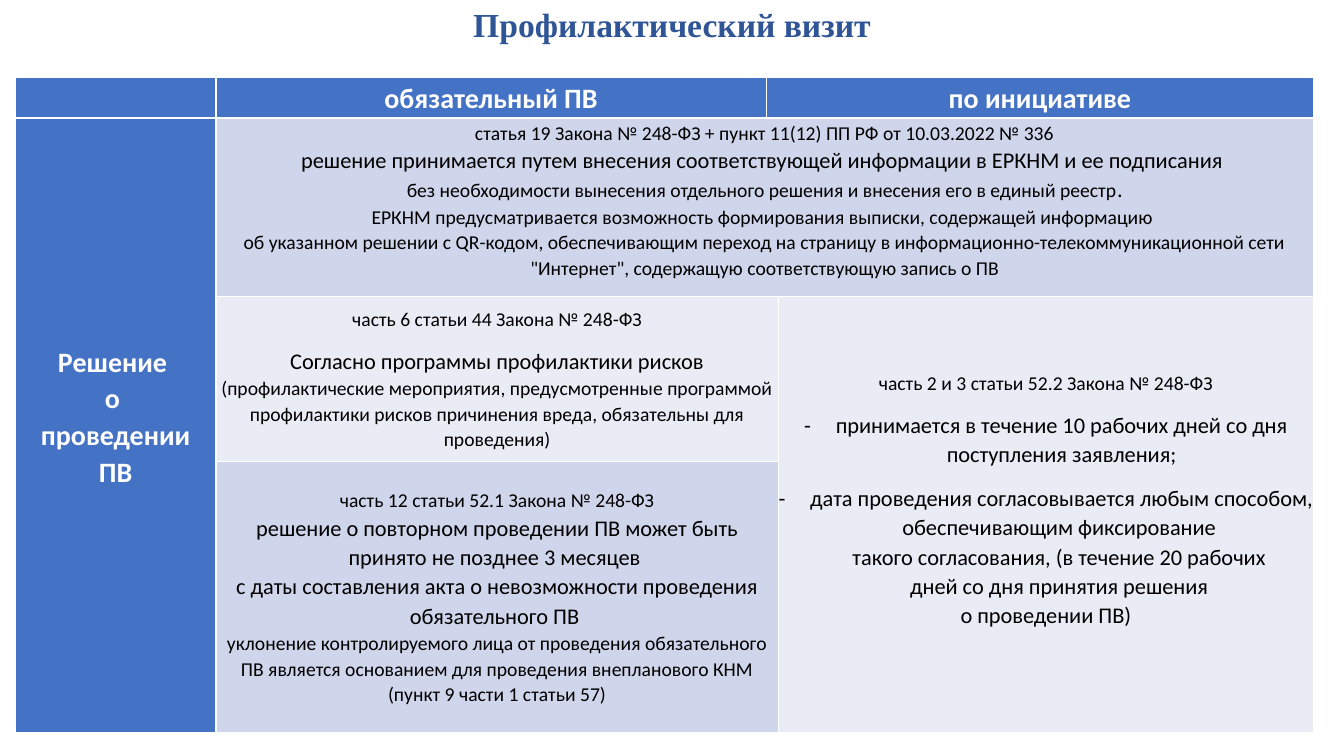
from lxml.etree import SubElement
from pptx import Presentation
from pptx.dml.color import RGBColor
from pptx.enum.text import MSO_ANCHOR as Anchor, PP_ALIGN as Align
from pptx.oxml.ns import qn
from pptx.util import Pt

WHITE = RGBColor(0xFF, 0xFF, 0xFF)
BLACK = RGBColor(0, 0, 0)
NAVY = RGBColor(0x2F, 0x55, 0x97)
BLUE = RGBColor(0x44, 0x72, 0xC4)
BAND = RGBColor(0xCF, 0xD5, 0xEA)
PALE = RGBColor(0xE9, 0xEB, 0xF5)

COLS = [143.28, 393.12, 8.64, 382.32]
ROWS = [28.8, 127.44, 118.08, 193.68]
GAP = 10.5
INDENT = 22.5


class Deck:
    """Hold the text style and the current slide."""

    font = "Calibri"
    spacing = 1.07

    def __init__(self, prs):
        self.s = prs.slides.add_slide(prs.slide_layouts[6])

    def run(self, p, text, size, color, bold=False, font=None):
        for i, line in enumerate(text.split("\n")):
            if i:
                p.add_line_break()
            r = p.add_run()
            r.text = line
            r.font.name = font or self.font
            r.font.size = Pt(size)
            r.font.bold = bold
            r.font.color.rgb = color

    def title(self, text, x, y, w, h):
        tf = self.s.shapes.add_textbox(Pt(x), Pt(y), Pt(w), Pt(h)).text_frame
        tf.word_wrap = True
        tf.vertical_anchor = Anchor.MIDDLE
        tf.margin_top = tf.margin_bottom = 0
        p = tf.paragraphs[0]
        p.alignment = Align.CENTER
        p.line_spacing = 0.9
        self.run(p, text, 24, NAVY, True, "Times New Roman")

    def table(self, x, y, cols, rows):
        tbl = self.s.shapes.add_table(
            len(rows), len(cols), Pt(x), Pt(y), Pt(sum(cols)), Pt(sum(rows))).table
        for col, width in zip(tbl.columns, cols):
            col.width = Pt(width)
        for row, height in zip(tbl.rows, rows):
            row.height = Pt(height)
        return tbl

    def bullet(self, p):
        pPr = p._p.get_or_add_pPr()
        pPr.set("marL", str(Pt(INDENT)))
        pPr.set("indent", str(-Pt(INDENT)))
        SubElement(pPr, qn("a:buFont")).set("typeface", self.font)
        SubElement(pPr, qn("a:buChar")).set("char", "-")

    def cell(self, tbl, start, end, fill, paras=(), color=BLACK, bold=False, bottom=0):
        c = tbl.cell(*start)
        if start != end:
            c.merge(tbl.cell(*end))
        c.fill.solid()
        c.fill.fore_color.rgb = fill
        c.vertical_anchor = Anchor.MIDDLE
        c.margin_left = c.margin_right = c.margin_top = 0
        c.margin_bottom = Pt(bottom)
        tf = c.text_frame
        for i, (runs, before, dash) in enumerate(paras):
            p = tf.add_paragraph() if i else tf.paragraphs[0]
            p.alignment = Align.CENTER
            p.line_spacing = self.spacing
            p.space_before = Pt(before)
            if dash:
                self.bullet(p)
            for text, size in runs:
                self.run(p, text, size, color, bold)


def para(text, size, before=0, dash=False):
    """Describe a paragraph of one run."""
    return [(text, size)], before, dash


def main():
    """Build the slide and save it."""
    prs = Presentation()
    prs.slide_width, prs.slide_height = Pt(960), Pt(540)
    deck = Deck(prs)
    deck.title("Профилактический визит", 0, 6, 960, 26)
    tbl = deck.table(11, 55.5, COLS, ROWS)

    deck.cell(tbl, (0, 0), (0, 0), BLUE)
    deck.cell(tbl, (0, 1), (0, 1), BLUE, [para("обязательный ПВ", 20)], WHITE, True)
    deck.cell(tbl, (0, 2), (0, 3), BLUE, [para("по инициативе", 20)], WHITE, True)

    heading = ["Решение ", "о ", "проведении", "ПВ"]
    deck.cell(tbl, (1, 0), (3, 0), BLUE, [para(t, 20) for t in heading], WHITE, True, 13)

    deck.cell(tbl, (1, 1), (1, 3), BAND, [
        para("статья 19 Закона № 248-ФЗ + пункт 11(12) ПП РФ от 10.03.2022 № 336", 14),
        para("решение принимается путем внесения соответствующей информации "
             "в ЕРКНМ и ее подписания ", 16),
        ([("без необходимости вынесения отдельного решения и внесения его "
           "в единый реестр", 14), (".", 16)], 0, False),
        para("ЕРКНМ предусматривается возможность формирования выписки, "
             "содержащей информацию ", 14),
        para("об указанном решении с QR-кодом, обеспечивающим переход на страницу "
             "в информационно-телекоммуникационной сети \"Интернет\", содержащую "
             "соответствующую запись о ПВ", 14),
    ], bottom=10)

    deck.cell(tbl, (2, 1), (2, 2), PALE, [
        para("часть 6 статьи 44 Закона № 248-ФЗ", 14),
        para("Согласно программы профилактики рисков", 16, GAP),
        para("(профилактические мероприятия, предусмотренные программой профилактики "
             "рисков причинения вреда, обязательны для проведения)", 14),
    ])

    deck.cell(tbl, (2, 3), (3, 3), PALE, [
        para("часть 2 и 3 статьи 52.2 Закона № 248-ФЗ", 14),
        para("принимается в течение 10 рабочих дней со дня поступления заявления;",
             16, GAP, True),
        para("дата проведения согласовывается любым способом, обеспечивающим "
             "фиксирование \nтакого согласования, (в течение 20 рабочих \n"
             "дней со дня принятия решения ", 16, GAP, True),
        para("о проведении ПВ)", 16),
    ], bottom=21)

    deck.cell(tbl, (3, 1), (3, 2), BAND, [
        para("часть 12 статьи 52.1 Закона № 248-ФЗ", 14),
        para("решение о повторном проведении ПВ может быть принято "
             "не позднее 3 месяцев ", 16),
        para("с даты составления акта о невозможности проведения обязательного ПВ ", 16),
        para("уклонение контролируемого лица от проведения обязательного ПВ является "
             "основанием для проведения внепланового КНМ (пункт 9 части 1 статьи 57)", 14),
    ])
    prs.save("out.pptx")


if __name__ == "__main__":
    main()
